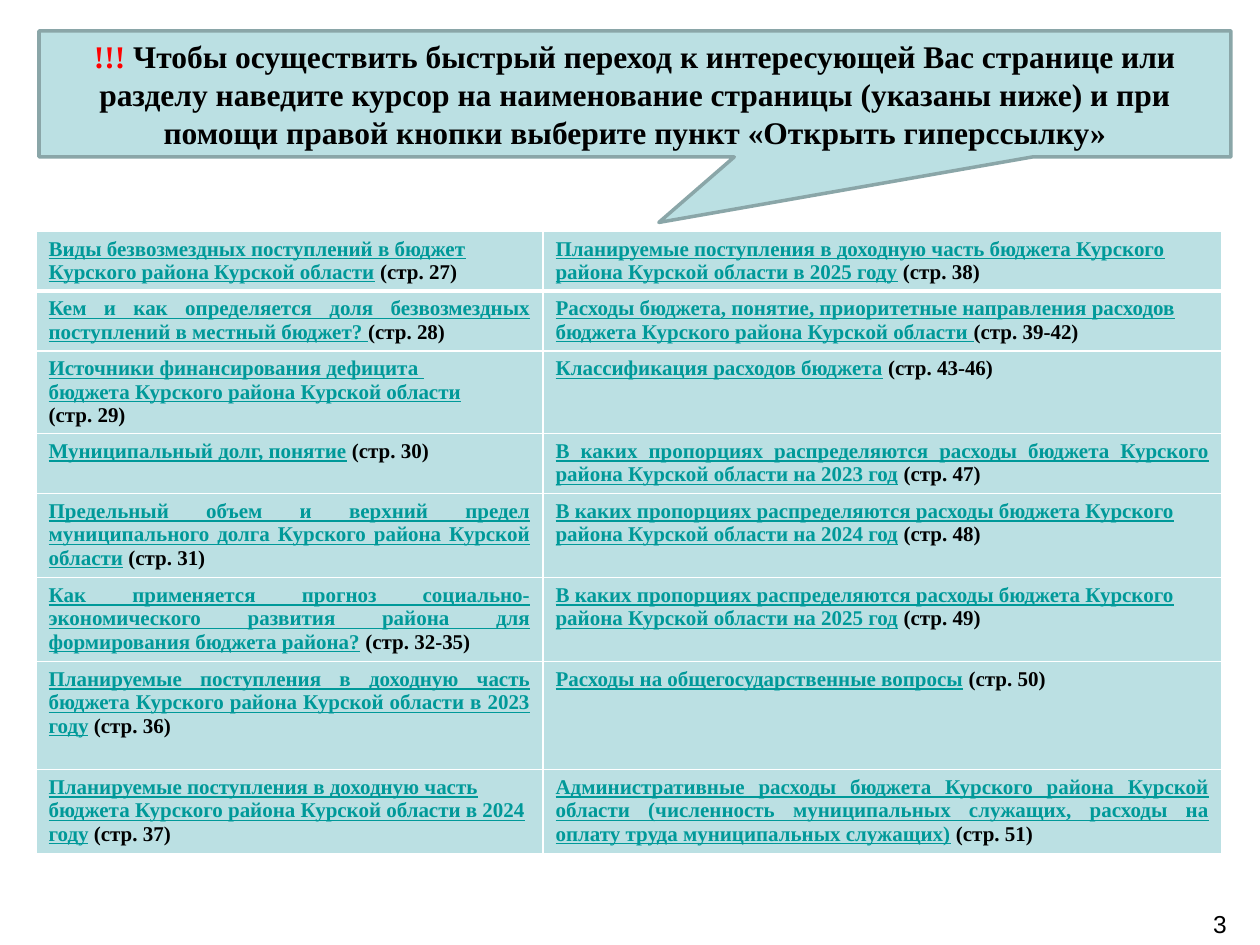
from lxml.etree import SubElement
from pptx import Presentation
from pptx.dml.color import RGBColor
from pptx.enum.shapes import MSO_SHAPE
from pptx.enum.text import MSO_ANCHOR, PP_ALIGN
from pptx.oxml.ns import qn
from pptx.util import Pt

PX = 914400 // 126
PALE = RGBColor(0xBB, 0xE0, 0xE3)
EDGE = RGBColor(0x8A, 0xA6, 0xA8)
TEAL = RGBColor(0x00, 0x99, 0x99)
RED = RGBColor(0xFF, 0x00, 0x00)
BLACK = RGBColor(0x00, 0x00, 0x00)
WHITE = RGBColor(0xFF, 0xFF, 0xFF)

LEFT, JUSTIFY = PP_ALIGN.LEFT, PP_ALIGN.JUSTIFY
SERIF = {"name": "Times New Roman", "bold": True}
LINK = {**SERIF, "size": Pt(12), "underline": True}
PAGES = {**SERIF, "size": Pt(12), "underline": False}
CALLOUT = {**SERIF, "size": Pt(18)}
NUMBER = {"name": "Arial", "size": Pt(14)}

NOTICE = [
    ("!!! ", RED),
    ("Чтобы осуществить быстрый переход к интересующей Вас странице или разделу "
     "наведите курсор на наименование страницы (указаны ниже) и при помощи правой "
     "кнопки выберите пункт «Открыть гиперссылку»", BLACK),
]
COLUMNS = [507, 679]
ROWS = [
    (60, (LEFT, [("Виды безвозмездных поступлений в бюджет Курского района Курской области", " (стр. 27)")]),
     (LEFT, [("Планируемые поступления в доходную часть бюджета Курского района Курской области в 2025 году", " (стр. 38)")])),
    (60, (JUSTIFY, [("Кем и как определяется доля безвозмездных поступлений в местный бюджет? ", "(стр. 28)")]),
     (LEFT, [("Расходы бюджета, понятие, приоритетные направления расходов бюджета Курского района Курской области ", "(стр. 39-42)")])),
    (60, (JUSTIFY, [("Источники финансирования дефицита ", ""),
                    ("бюджета Курского района Курской области", " "),
                    ("", "(стр. 29)")]),
     (JUSTIFY, [("Классификация расходов бюджета", " (стр. 43-46)")])),
    (60, (JUSTIFY, [("Муниципальный долг, понятие", " (стр. 30)")]),
     (JUSTIFY, [("В каких пропорциях распределяются расходы бюджета Курского района Курской области на 2023 год", " (стр. 47) ")])),
    (84, (JUSTIFY, [("Предельный объем и верхний предел муниципального долга Курского района Курской области", " (стр. 31)")]),
     (LEFT, [("В каких пропорциях распределяются расходы бюджета Курского района Курской области на 2024 год", " (стр. 48)")])),
    (84, (JUSTIFY, [("Как применяется прогноз социально-экономического развития района для формирования бюджета района?", " (стр. 32-35)")]),
     (LEFT, [("В каких пропорциях распределяются расходы бюджета Курского района Курской области на 2025 год", " (стр. 49)")])),
    (108, (JUSTIFY, [("Планируемые поступления в доходную часть бюджета Курского района Курской области в 2023 году", " (стр. 36)")]),
     (LEFT, [("Расходы на общегосударственные вопросы", " (стр. 50)")])),
    (84, (LEFT, [("Планируемые поступления в доходную часть бюджета Курского района Курской области в 2024 году", " (стр. 37)")]),
     (JUSTIFY, [("Административные расходы бюджета Курского района Курской области (численность муниципальных служащих, расходы на оплату труда муниципальных служащих)", " (стр. 51) ")])),
]


def px(*lengths):
    return [length * PX for length in lengths]


def add_run(paragraph, text, color, style):
    run = paragraph.add_run()
    run.text = text
    for name, value in style.items():
        setattr(run.font, name, value)
    run.font.color.rgb = color


def set_borders(cell, widths):
    properties = cell._tc.get_or_add_tcPr()
    for position, (side, width) in enumerate(widths.items()):
        line = SubElement(properties, qn(f"a:ln{side}"), w=str(Pt(width)))
        fill = SubElement(line, qn("a:solidFill"))
        SubElement(fill, qn("a:srgbClr"), val=str(WHITE))
        properties.insert(position, line)


def fill_cell(cell, alignment, lines):
    cell.fill.solid()
    cell.fill.fore_color.rgb = PALE
    frame = cell.text_frame
    for index, (link, pages) in enumerate(lines):
        paragraph = frame.add_paragraph() if index else frame.paragraphs[0]
        paragraph.alignment = alignment
        for text, color, style in ((link, TEAL, LINK), (pages, BLACK, PAGES)):
            if text:
                add_run(paragraph, text, color, style)


def add_contents(slide):
    heights = [row[0] for row in ROWS]
    table = slide.shapes.add_table(
        len(ROWS), len(COLUMNS), *px(36, 231, sum(COLUMNS), sum(heights))).table
    for column, width in zip(table.columns, COLUMNS):
        column.width = width * PX
    for index, (height, *cells) in enumerate(ROWS):
        table.rows[index].height = height * PX
        widths = {"L": 1, "R": 1, "T": 3 if index == 1 else 1, "B": 3 if index == 0 else 1}
        for cell, content in zip(table.rows[index].cells, cells):
            fill_cell(cell, *content)
            set_borders(cell, widths)


def add_notice(slide):
    shape = slide.shapes.add_shape(MSO_SHAPE.RECTANGULAR_CALLOUT, *px(39, 31, 1192, 126))
    shape.adjustments[0], shape.adjustments[1] = 0.02, 1.02
    shape.shadow.inherit = False
    shape.fill.solid()
    shape.fill.fore_color.rgb = PALE
    shape.line.color.rgb = EDGE
    shape.line.width = Pt(2)
    frame = shape.text_frame
    frame.word_wrap = True
    frame.vertical_anchor = MSO_ANCHOR.MIDDLE
    paragraph = frame.paragraphs[0]
    paragraph.alignment = PP_ALIGN.CENTER
    for text, color in NOTICE:
        add_run(paragraph, text, color, CALLOUT)


def add_page_number(slide):
    frame = slide.shapes.add_textbox(*px(945, 903, 294, 66)).text_frame
    frame.word_wrap = True
    paragraph = frame.paragraphs[0]
    paragraph.alignment = PP_ALIGN.RIGHT
    add_run(paragraph, "3", BLACK, NUMBER)


def main():
    presentation = Presentation()
    presentation.slide_width, presentation.slide_height = px(1260, 945)
    slide = presentation.slides.add_slide(presentation.slide_layouts[6])
    add_contents(slide)
    add_notice(slide)
    add_page_number(slide)
    presentation.save("out.pptx")


if __name__ == "__main__":
    main()
